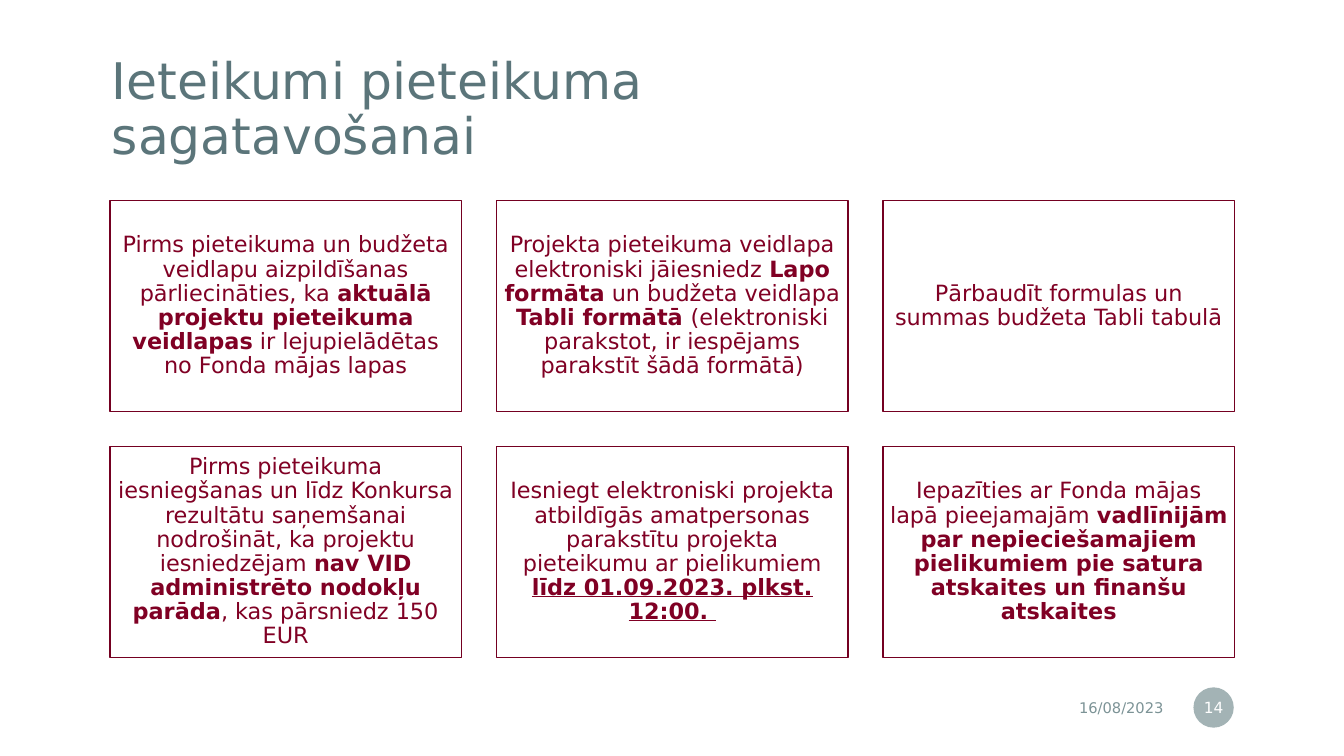
import pptx
import pptx.util
import pptx.dml.color
import pptx.enum.shapes
import pptx.enum.text
import pptx.oxml
import pptx.oxml.ns

Pt = pptx.util.Pt
Align = pptx.enum.text.PP_ALIGN
Preset = pptx.enum.shapes.MSO_SHAPE

FONT = "DejaVu Sans"
SLATE = "5B757A"
GREY = "7C9396"
WINE = "800024"
BORDER = "740021"
WHITE = "FFFFFF"

CARD_LEFT, CARD_TOP = 78.5, 143.3
CARD_WIDTH, CARD_HEIGHT = 251.2, 150.6
COLUMN_STEP, ROW_STEP = 276.1, 175.7
COLUMNS = 3

PLAIN, BOLD, DEADLINE = "plain", "bold", "deadline"

ADVICE = [
    [("Pirms pieteikuma un budžeta veidlapu aizpildīšanas pārliecināties, ka ", PLAIN),
     ("aktuālā projektu pieteikuma veidlapas", BOLD),
     (" ir lejupielādētas no Fonda mājas lapas", PLAIN)],
    [("Projekta pieteikuma veidlapa elektroniski jāiesniedz ", PLAIN),
     ("Lapo formāta", BOLD),
     (" un budžeta veidlapa ", PLAIN),
     ("Tabli formātā ", BOLD),
     ("(elektroniski parakstot, ir iespējams parakstīt šādā formātā)", PLAIN)],
    [("Pārbaudīt formulas un summas budžeta Tabli tabulā", PLAIN)],
    [("Pirms pieteikuma iesniegšanas un līdz Konkursa rezultātu saņemšanai "
      "nodrošināt, ka projektu iesniedzējam ", PLAIN),
     ("nav VID administrēto nodokļu parāda", BOLD),
     (", kas pārsniedz 150 EUR", PLAIN)],
    [("Iesniegt elektroniski projekta atbildīgās amatpersonas parakstītu "
      "projekta pieteikumu ar pielikumiem ", PLAIN),
     ("līdz 01.09.2023. plkst. 12:00. ", DEADLINE)],
    [("Iepazīties ar Fonda mājas lapā pieejamajām ", PLAIN),
     ("vadlīnijām par nepieciešamajiem pielikumiem pie satura atskaites "
      "un finanšu atskaites", BOLD)],
]


def rgb(value):
    return pptx.dml.color.RGBColor.from_string(value)


def write(holder, runs, size, color, align, insets, spacing=1.0):
    frame = holder.text_frame
    frame.word_wrap = True
    frame.auto_size = pptx.enum.text.MSO_AUTO_SIZE.NONE
    frame.vertical_anchor = pptx.enum.text.MSO_ANCHOR.MIDDLE
    frame.margin_left = frame.margin_right = Pt(insets[0])
    frame.margin_top = frame.margin_bottom = Pt(insets[1])
    paragraph = frame.paragraphs[0]
    paragraph.alignment = align
    paragraph.line_spacing = spacing
    for text, style in runs:
        run = paragraph.add_run()
        run.text = text
        run.font.name = FONT
        run.font.size = Pt(size)
        run.font.color.rgb = rgb(color)
        run.font.bold = style != PLAIN
        run.font.underline = style == DEADLINE


def add_panel(slide, preset, left, top, width, height, fill):
    panel = slide.shapes.add_shape(preset, Pt(left), Pt(top), Pt(width), Pt(height))
    panel.shadow.inherit = False
    panel.fill.solid()
    panel.fill.fore_color.rgb = rgb(fill)
    return panel


def add_title(slide):
    title = slide.shapes.title
    title.left, title.top = Pt(65.5), Pt(34.6)
    title.width, title.height = Pt(628.6), Pt(88.6)
    write(title, [("Ieteikumi pieteikuma sagatavošanai", PLAIN)],
          36, SLATE, Align.LEFT, (14.4, 14.4), 0.9)


def add_card(slide, index, runs):
    row, column = divmod(index, COLUMNS)
    card = add_panel(slide, Preset.RECTANGLE,
                     CARD_LEFT + column * COLUMN_STEP, CARD_TOP + row * ROW_STEP,
                     CARD_WIDTH, CARD_HEIGHT, WHITE)
    card.line.color.rgb = rgb(BORDER)
    card.line.width = Pt(1)
    write(card, runs, 16, WINE, Align.CENTER, (5, 5), 0.9)


def add_date(slide):
    date = slide.shapes.add_textbox(Pt(621.4), Pt(492.5), Pt(216.7), Pt(25.2))
    write(date, [("16/08/2023", PLAIN)], 10.5, GREY, Align.RIGHT, (7.2, 3.6))


def add_page_number(slide):
    badge = add_panel(slide, Preset.OVAL, 852.5, 491, 28.8, 28.8, GREY)
    badge.line.fill.background()
    tint = badge.fill._xPr.find(".//" + pptx.oxml.ns.qn("a:srgbClr"))
    tint.append(pptx.oxml.parse_xml(
        '<a:alpha %s val="70000"/>' % pptx.oxml.ns.nsdecls("a")))
    write(badge, [("14", PLAIN)], 11, WHITE, Align.CENTER, (1.4, 3.6))


def main():
    deck = pptx.Presentation()
    deck.slide_width, deck.slide_height = Pt(960), Pt(540)
    slide = deck.slides.add_slide(deck.slide_layouts[5])
    add_title(slide)
    add_date(slide)
    add_page_number(slide)
    for index, runs in enumerate(ADVICE):
        add_card(slide, index, runs)
    deck.save("out.pptx")


if __name__ == "__main__":
    main()
